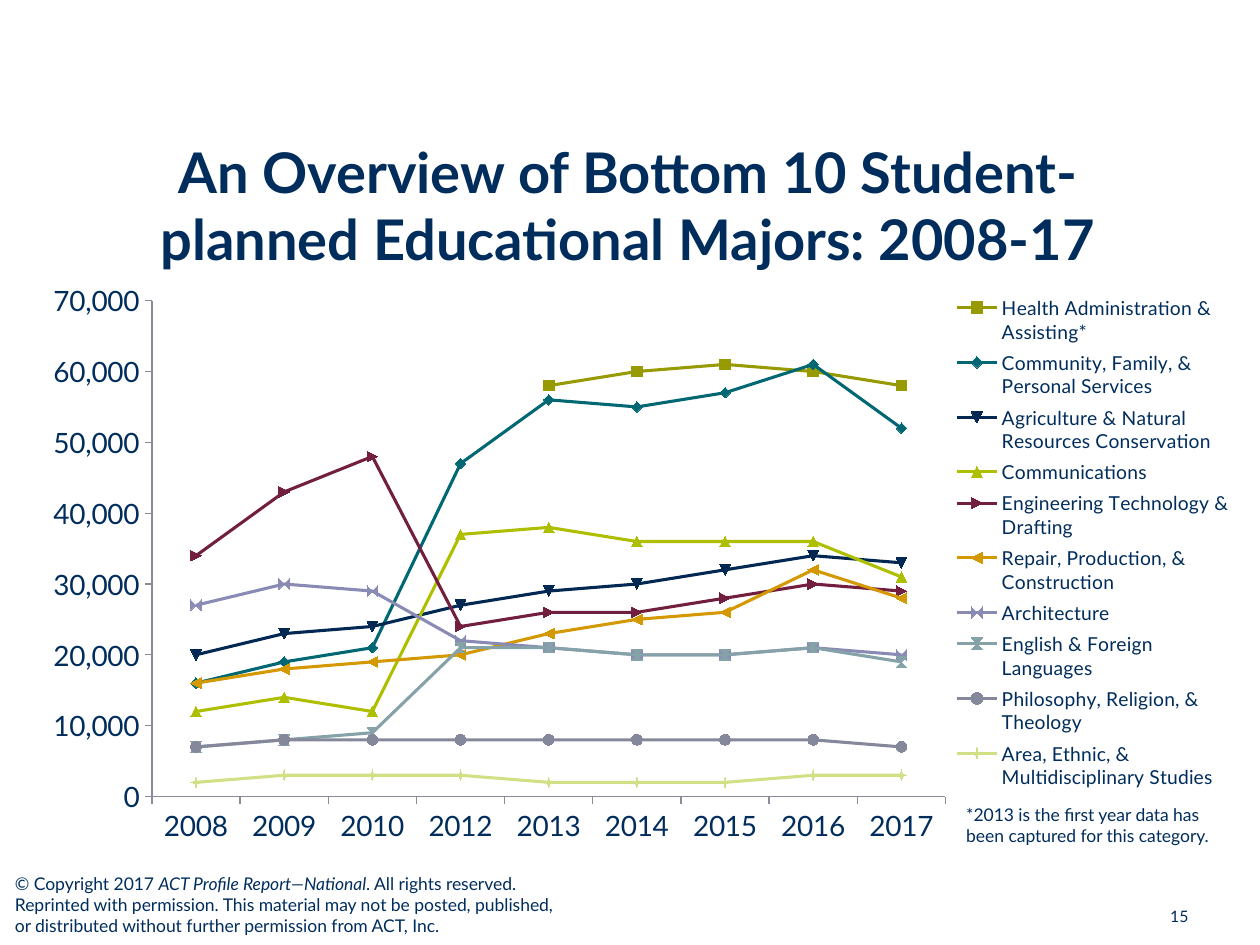
from dataclasses import dataclass

from lxml import etree
from pptx import Presentation
from pptx import util as u
from pptx.chart.data import CategoryChartData
from pptx.dml.color import RGBColor
from pptx.enum import chart as charts, text
from pptx.oxml import ns

COLUMNS, ROWS = 100, 75


@dataclass(frozen=True)
class Theme:
    font: str = "Lato"
    ink: str = "002D5C"
    axis: str = "8A8C9C"
    title: int = 32
    ticks: int = 16
    legend: int = 11
    note: int = 10
    number: int = 9
    line: float = 1.75
    marker: int = 6


YEARS = ["2008", "2009", "2010", "2012", "2013", "2014", "2015", "2016", "2017"]

# Name, colour, thousands of students per year
MAJORS = [
    ("Health Administration & Assisting*", "979A00",
     [None, None, None, None, 58, 60, 61, 60, 58]),
    ("Community, Family, & Personal Services", "006773",
     [16, 19, 21, 47, 56, 55, 57, 61, 52]),
    ("Agriculture & Natural Resources Conservation", "002852",
     [20, 23, 24, 27, 29, 30, 32, 34, 33]),
    ("Communications", "AEBF00", [12, 14, 12, 37, 38, 36, 36, 36, 31]),
    ("Engineering Technology & Drafting", "721E3E",
     [34, 43, 48, 24, 26, 26, 28, 30, 29]),
    ("Repair, Production, & Construction", "D49800",
     [16, 18, 19, 20, 23, 25, 26, 32, 28]),
    ("Architecture", "898BB4", [27, 30, 29, 22, 21, 20, 20, 21, 20]),
    ("English & Foreign Languages", "84A2A8",
     [7, 8, 9, 21, 21, 20, 20, 21, 19]),
    ("Philosophy, Religion, & Theology", "85889B",
     [7, 8, 8, 8, 8, 8, 8, 8, 7]),
    ("Area, Ethnic, & Multidisciplinary Studies", "D2E085",
     [2, 3, 3, 3, 2, 2, 2, 3, 3]),
]


def apply(target, values):
    for name, value in values.items():
        setattr(target, name, value)


def place(element, inner=False, **shares):
    """Give a plot area or legend a fixed place, in shares of the chart."""
    for old in element.findall(ns.qn("c:layout")):
        element.remove(old)
    layout = etree.Element(ns.qn("c:layout"))
    manual = etree.SubElement(layout, ns.qn("c:manualLayout"))
    settings = {"layoutTarget": "inner"} if inner else {}
    settings |= {"xMode": "edge", "yMode": "edge"} | shares
    for name, value in settings.items():
        etree.SubElement(manual, ns.qn(f"c:{name}")).set("val", str(value))
    position = element.find(ns.qn("c:legendPos"))
    if position is None:
        element.insert(0, layout)
    else:
        position.addnext(layout)


class SlideBuilder:
    def __init__(self, presentation, theme):
        self.theme = theme
        self.width = presentation.slide_width
        self.height = presentation.slide_height
        self.slide = presentation.slides.add_slide(presentation.slide_layouts[6])

    def area(self, left, top, width, height):
        """Turn grid columns and rows into slide lengths."""
        column, row = self.width / COLUMNS, self.height / ROWS
        return [int(n) for n in (left * column, top * row, width * column, height * row)]

    def style(self, font, size, **extra):
        apply(font, {"name": self.theme.font, "size": u.Pt(size), **extra})
        font.color.rgb = RGBColor.from_string(self.theme.ink)

    def text(self, area, paragraphs, size, align=text.PP_ALIGN.LEFT,
             anchor=text.MSO_ANCHOR.TOP, bold=False):
        """Each paragraph is a list of (words, italic) runs."""
        frame = self.slide.shapes.add_textbox(*self.area(*area)).text_frame
        apply(frame, {"word_wrap": True, "vertical_anchor": anchor})
        for index, runs in enumerate(paragraphs):
            paragraph = frame.add_paragraph() if index else frame.paragraphs[0]
            paragraph.alignment = align
            for words, italic in runs:
                run = paragraph.add_run()
                run.text = words
                self.style(run.font, size, bold=bold, italic=italic)

    def line_chart(self, area, categories, series, plot, legend):
        data = CategoryChartData(number_format="#,##0")
        data.categories = categories
        for name, _, thousands in series:
            data.add_series(name, [n if n is None else n * 1000 for n in thousands])
        chart = self.slide.shapes.add_chart(
            charts.XL_CHART_TYPE.LINE_MARKERS, *self.area(*area), data).chart
        apply(chart, {"has_title": False, "has_legend": True})
        self.style(chart.font, self.theme.ticks)
        chart.plots[0].vary_by_categories = False
        apply(chart.legend, {"position": charts.XL_LEGEND_POSITION.RIGHT,
                             "include_in_layout": False})
        self.style(chart.legend.font, self.theme.legend)
        place(chart.plots[0]._element.getparent(), inner=True, **plot)
        place(chart.legend._element, **legend)
        self.axes(chart)
        for line, (_, colour, _) in zip(chart.plots[0].series, series):
            self.series(line, RGBColor.from_string(colour))

    def axes(self, chart):
        apply(chart.value_axis, {"minimum_scale": 0, "maximum_scale": 70000,
                                 "major_unit": 10000})
        apply(chart.value_axis.tick_labels, {"number_format": "#,##0",
                                             "number_format_is_linked": False})
        for axis in (chart.category_axis, chart.value_axis):
            apply(axis, {"has_major_gridlines": False,
                         "major_tick_mark": charts.XL_TICK_MARK.OUTSIDE,
                         "minor_tick_mark": charts.XL_TICK_MARK.NONE})
            self.style(axis.tick_labels.font, self.theme.ticks)
            axis.format.line.width = u.Pt(0.75)
            axis.format.line.color.rgb = RGBColor.from_string(self.theme.axis)

    def series(self, line, colour):
        line.smooth = False
        line.format.line.width = u.Pt(self.theme.line)
        line.format.line.color.rgb = colour
        line.marker.size = self.theme.marker
        line.marker.format.fill.solid()
        line.marker.format.fill.fore_color.rgb = colour
        line.marker.format.line.color.rgb = colour


def main():
    presentation = Presentation()
    apply(presentation, {"slide_width": u.Inches(10), "slide_height": u.Inches(7.5)})
    theme = Theme()
    builder = SlideBuilder(presentation, theme)

    builder.text((86.6, 71.5, 8.7, 2.5), [[("15", False)]], theme.number,
                 text.PP_ALIGN.RIGHT, text.MSO_ANCHOR.MIDDLE)
    builder.text((9.9, 12.9, 79.9, 6.7),
                 [[("An Overview of Bottom 10 Student-planned Educational Majors: 2008-17",
                    False)]],
                 theme.title, text.PP_ALIGN.CENTER, text.MSO_ANCHOR.MIDDLE, bold=True)
    builder.line_chart((1.4, 21.9, 96.9, 49.2), YEARS, MAJORS,
                       plot={"x": 0.11, "y": 0.04, "w": 0.65, "h": 0.8},
                       legend={"x": 0.77, "y": 0.02, "w": 0.23, "h": 0.82})
    builder.text((0.2, 68.8, 45.5, 6.1), [
        [("© Copyright\u00a02017 ", False), ("ACT Profile Report—National", True),
         (". All rights reserved.", False)],
        [("Reprinted with permission. This material may not be posted, published, "
          "or distributed without further permission from ACT, Inc.", False)],
    ], theme.note)
    builder.text((75.7, 63.3, 22.6, 4.4),
                 [[("*2013 is the first year data has been captured for this category.",
                    False)]], theme.note)
    presentation.save("out.pptx")


if __name__ == "__main__":
    main()
